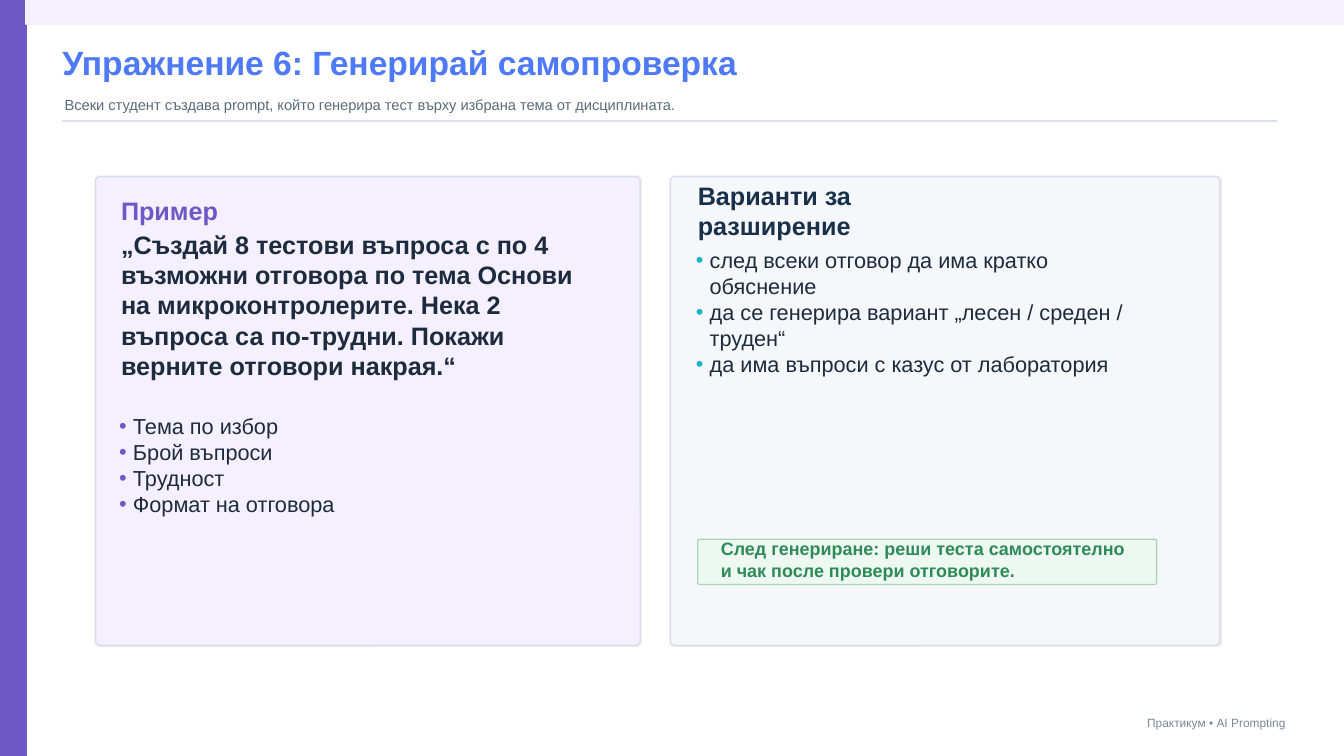
import pptx
import pptx.util
import pptx.dml.color
import pptx.enum.shapes
import pptx.enum.text
import pptx.oxml
import pptx.oxml.ns
from pptx.util import Cm

PURPLE, LILAC, INK, BORDER = "6E58C6", "F4F0FF", "1E2B3C", "D9DFEA"
NS = pptx.oxml.ns.nsdecls("a")
ALIGN = pptx.enum.text.PP_ALIGN
ANCHOR = pptx.enum.text.MSO_ANCHOR
SHAPE = pptx.enum.shapes.MSO_SHAPE


def rgb(color):
    return pptx.dml.color.RGBColor.from_string(color)


def write(sp, at, lines, size, color, bold=False, align=ALIGN.LEFT, anchor=ANCHOR.MIDDLE):
    """Place a text shape and fill it, one paragraph per line."""
    sp.left, sp.top, sp.width, sp.height = [Cm(v) for v in at]
    tf = sp.text_frame
    tf.word_wrap = True
    tf.auto_size = pptx.enum.text.MSO_AUTO_SIZE.NONE
    tf.vertical_anchor = anchor
    tf.margin_left = tf.margin_top = tf.margin_right = tf.margin_bottom = 0
    for i, line in enumerate(lines):
        p = tf.add_paragraph() if i else tf.paragraphs[0]
        p.alignment = align
        p.space_before = pptx.util.Pt(0)
        r = p.add_run()
        r.text = line
        r.font.name = "Arial"
        r.font.size = pptx.util.Pt(size)
        r.font.bold = bold
        r.font.color.rgb = rgb(color)


prs = pptx.Presentation()
prs.slide_width, prs.slide_height = Cm(33.86), Cm(19.05)
s = prs.slides.add_slide(prs.slide_layouts[3])  # Two Content

# Side and top bands, two panels, note box: kind, position, fill, line, corner, shadow
boxes = [
    (SHAPE.RECTANGLE, (0, 0, 0.66, 19.05), PURPLE, PURPLE, None, False),
    (SHAPE.RECTANGLE, (0.66, 0, 33.2, 0.61), LILAC, LILAC, None, False),
    (SHAPE.ROUNDED_RECTANGLE, (2.41, 4.45, 13.72, 11.81), LILAC, BORDER, 0.009, True),
    (SHAPE.ROUNDED_RECTANGLE, (16.89, 4.45, 13.84, 11.81), "F6F7FB", BORDER, 0.009, True),
    (SHAPE.ROUNDED_RECTANGLE, (17.58, 13.59, 11.56, 1.14), "EEF8F3", "A9D7B8", 0.044, False),
]
for kind, at, fill, line, corner, shadow in boxes:
    sp = s.shapes.add_shape(kind, *[Cm(v) for v in at])
    sp.fill.solid()
    sp.fill.fore_color.rgb = rgb(fill)
    sp.line.color.rgb = rgb(line)
    sp.line.width = pptx.util.Pt(1)
    sp.shadow.inherit = False
    if corner:
        sp.adjustments[0] = corner
    if shadow:
        effects = sp._element.spPr.find(pptx.oxml.ns.qn("a:effectLst"))
        effects.append(pptx.oxml.parse_xml(
            f'<a:outerShdw {NS} blurRad="6350" dist="2540" dir="2700000">'
            '<a:srgbClr val="000000"><a:alpha val="10000"/></a:srgbClr></a:outerShdw>'))

# Rule under the header
rule = s.shapes.add_connector(pptx.enum.shapes.MSO_CONNECTOR.STRAIGHT,
                              Cm(1.57), Cm(3.05), Cm(32.18), Cm(3.05))
rule.line.color.rgb = rgb(BORDER)
rule.line.width = pptx.util.Pt(1.2)
rule._element.spPr.append(pptx.oxml.parse_xml(f"<a:effectLst {NS}/>"))

# Title
write(s.shapes.title, (1.57, 0.97, 23.62, 1.17),
      ["Упражнение 6: Генерирай самопроверка"], 24, "4E79F7", True)

# Subtitle, footer, panel headings, sample prompt and note
texts = [
    ((1.63, 2.36, 27.94, 0.56),
     "Всеки студент създава prompt, който генерира тест върху избрана тема от дисциплината.",
     10.5, "5C6B7A", False, ALIGN.LEFT),
    ((26.04, 17.98, 6.35, 0.46), "Практикум • AI Prompting", 8.5, "7A8796", False, ALIGN.RIGHT),
    ((3.05, 5.08, 3.3, 0.46), "Пример", 18, PURPLE, True, ALIGN.LEFT),
    ((3.05, 6.22, 11.68, 2.92),
     "„Създай 8 тестови въпроса с по 4 възможни отговора по тема Основи на "
     "микроконтролерите. Нека 2 въпроса са по-трудни. Покажи верните отговори накрая.“",
     18, INK, True, ALIGN.LEFT),
    ((17.58, 5.08, 7.11, 0.46), "Варианти за разширение", 18, "18304A", True, ALIGN.LEFT),
    ((18.16, 13.89, 10.41, 0.41),
     "След генериране: реши теста самостоятелно и чак после провери отговорите.",
     12.8, "2E8B57", True, ALIGN.LEFT),
]
for at, text, size, color, bold, align in texts:
    sp = s.shapes.add_textbox(0, 0, 0, 0)
    write(sp, at, [text], size, color, bold, align)

# Bulleted lists, raised above the panels
lists = [
    (1, (3, 10.41, 8.13, 3.56), PURPLE,
     ["Тема по избор", "Брой въпроси", "Трудност", "Формат на отговора"]),
    (2, (17.53, 6.22, 11.43, 5.08), "18B6C2",
     ["след всеки отговор да има кратко обяснение",
      "да се генерира вариант „лесен / среден / труден“",
      "да има въпроси с казус от лаборатория"]),
]
for idx, at, bullet_color, items in lists:
    sp = s.placeholders[idx]
    s.shapes._spTree.append(sp._element)
    write(sp, at, items, 15.5, INK, anchor=ANCHOR.TOP)
    for p in sp.text_frame.paragraphs:
        pPr = p._p.get_or_add_pPr()
        pPr.set("marL", str(Cm(0.35)))
        pPr.set("indent", str(-Cm(0.35)))
        for xml in (f'<a:buClr {NS}><a:srgbClr val="{bullet_color}"/></a:buClr>',
                    f'<a:buFont {NS} typeface="Arial"/>',
                    f'<a:buChar {NS} char="•"/>'):
            pPr.append(pptx.oxml.parse_xml(xml))

prs.save("out.pptx")
